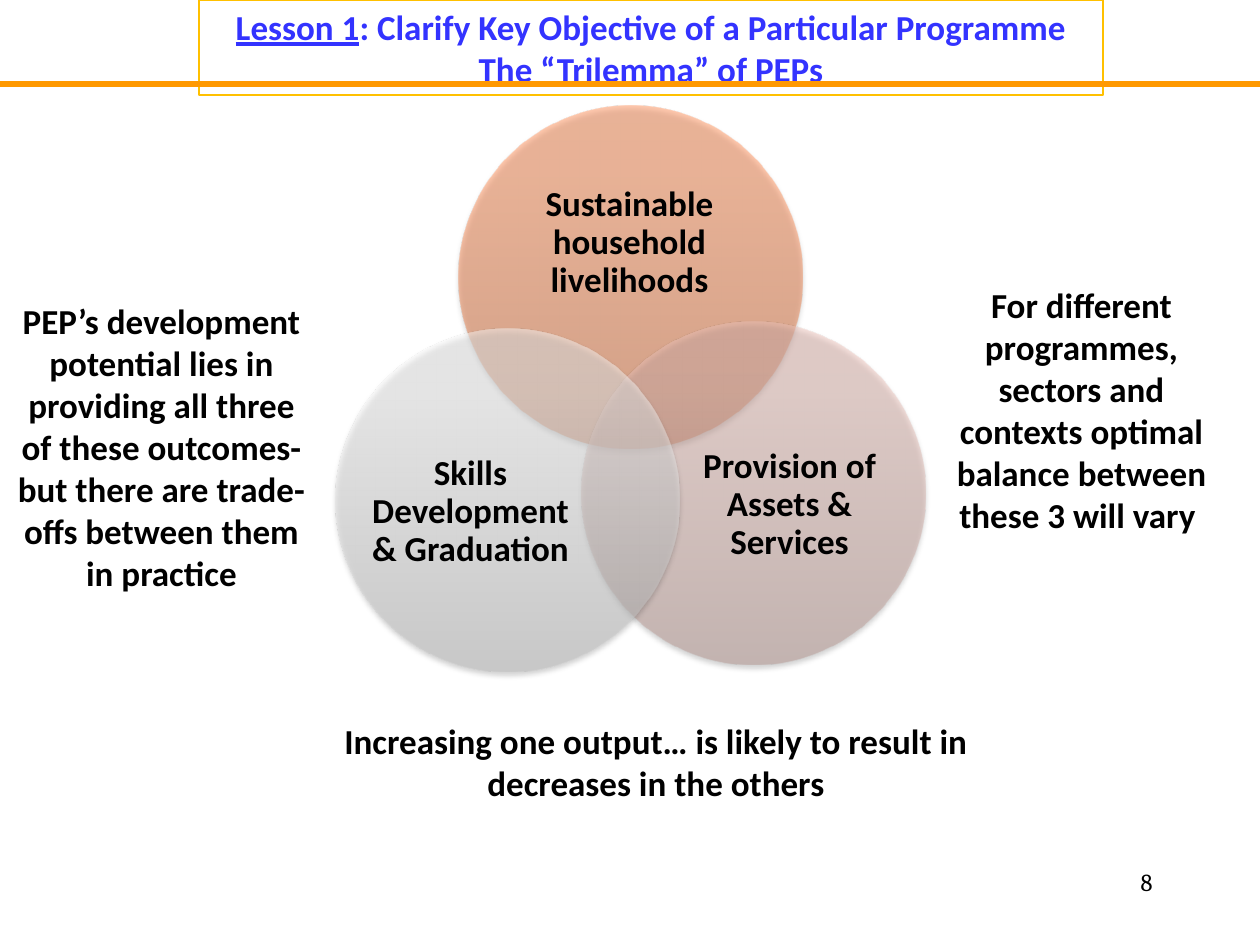
from lxml import etree
from pptx import Presentation
from pptx.dml.color import RGBColor
from pptx.enum.shapes import MSO_CONNECTOR as Connector, MSO_SHAPE as Shape
from pptx.enum.text import MSO_ANCHOR as Anchor, MSO_AUTO_SIZE as AutoSize, PP_ALIGN as Align
from pptx.oxml import parse_xml
from pptx.oxml.ns import nsdecls, qn
from pptx.util import Pt

SCALE = 914400 / 126


def px(*lengths):
    return [round(length * SCALE) for length in lengths]


def add_run(paragraph, text, color="000000", size=20, name="Calibri", bold=True):
    run = paragraph.add_run()
    run.text = text
    run.font.name = name
    run.font.size = Pt(size)
    run.font.bold = bold
    run.font.color.rgb = RGBColor.from_string(color)
    return run


presentation = Presentation()
presentation.slide_width, presentation.slide_height = px(1260, 945)
slide = presentation.slides.add_slide(presentation.slide_layouts[5])

title = slide.shapes.title
title.left, title.top, title.width, title.height = px(199, 0, 904, 95)
title.line.color.rgb = RGBColor.from_string("FFC000")
title.line.width = Pt(0.75)
title._element.spPr.append(parse_xml(
    f'<a:effectLst {nsdecls("a")}><a:innerShdw blurRad="114300" dist="0" dir="0">'
    '<a:srgbClr val="000000"/></a:innerShdw></a:effectLst>'))
frame = title.text_frame
frame.auto_size = AutoSize.NONE
frame.word_wrap = True
frame.vertical_anchor = Anchor.MIDDLE
paragraph = frame.paragraphs[0]
paragraph.alignment = Align.CENTER
add_run(paragraph, "Lesson 1", "3333FF").font.underline = True
add_run(paragraph, ": Clarify Key Objective of a Particular Programme The “Trilemma” of PEPs",
        "3333FF").font.underline = False

DIAMETER = 343
circles = [
    (459, 106, ("CF6C3B", "FF925B", "FF935D"), (504, 166, 251, 154),
     "Sustainable household livelihoods"),
    (582, 322, ("B4958F", "EAC2BA", "ECC2BA"), (687, 411, 205, 189),
     "Provision of Assets & Services"),
    (336, 329, ("BEBEBE", "F7F7F7", "F8F8F8"), (368, 418, 205, 189),
     "Skills Development & Graduation"),
]
for left, top, colors, label_box, text in circles:
    circle = slide.shapes.add_shape(Shape.OVAL, *px(left, top, DIAMETER, DIAMETER))
    circle.line.fill.background()
    stops = "".join(
        f'<a:gs pos="{position}"><a:srgbClr val="{color}"><a:alpha val="50000"/></a:srgbClr></a:gs>'
        for position, color in zip((0, 80000, 100000), colors))
    properties = circle._element.spPr
    properties.find(qn("a:prstGeom")).addnext(parse_xml(
        f'<a:gradFill {nsdecls("a")} rotWithShape="1"><a:gsLst>{stops}</a:gsLst>'
        '<a:lin ang="16200000" scaled="0"/></a:gradFill>'))
    properties.append(parse_xml(
        f'<a:effectLst {nsdecls("a")}><a:outerShdw blurRad="39370" dist="22860" dir="5400000" '
        'rotWithShape="0"><a:srgbClr val="000000"><a:alpha val="35000"/></a:srgbClr>'
        '</a:outerShdw></a:effectLst>'))

    label = slide.shapes.add_textbox(*px(*label_box))
    frame = label.text_frame
    frame.word_wrap = True
    frame.vertical_anchor = Anchor.MIDDLE
    frame.margin_left = frame.margin_right = frame.margin_top = frame.margin_bottom = 0
    paragraph = frame.paragraphs[0]
    paragraph.alignment = Align.CENTER
    paragraph.line_spacing = 0.9
    add_run(paragraph, text)

rule = slide.shapes.add_connector(Connector.STRAIGHT, *px(0, 84, 1260, 84))
rule.line.color.rgb = RGBColor.from_string("FF9900")
rule.line.width = Pt(3)
etree.SubElement(rule._element.spPr, qn("a:effectLst"))

notes = [
    ((4, 168, 315, 557), Anchor.MIDDLE,
     "PEP’s development potential lies in providing all three of these outcomes- "
     "but there are trade-offs between them in practice"),
    ((924, 277, 315, 310), Anchor.TOP,
     "For different programmes, sectors and contexts optimal balance between these 3 will vary "),
    ((273, 672, 766, 179), Anchor.MIDDLE,
     "Increasing one output… is likely to result in decreases in the others"),
]
for box, anchor, text in notes:
    note = slide.shapes.add_textbox(*px(*box))
    note.text_frame.word_wrap = True
    note.text_frame.vertical_anchor = anchor
    paragraph = note.text_frame.paragraphs[0]
    paragraph.alignment = Align.CENTER
    add_run(paragraph, text)

number = slide.shapes.add_textbox(*px(903, 861, 262, 63))
number.text_frame.word_wrap = True
paragraph = number.text_frame.paragraphs[0]
paragraph.alignment = Align.RIGHT
add_run(paragraph, "8", size=14, name="Cambria", bold=False)

presentation.save("out.pptx")
